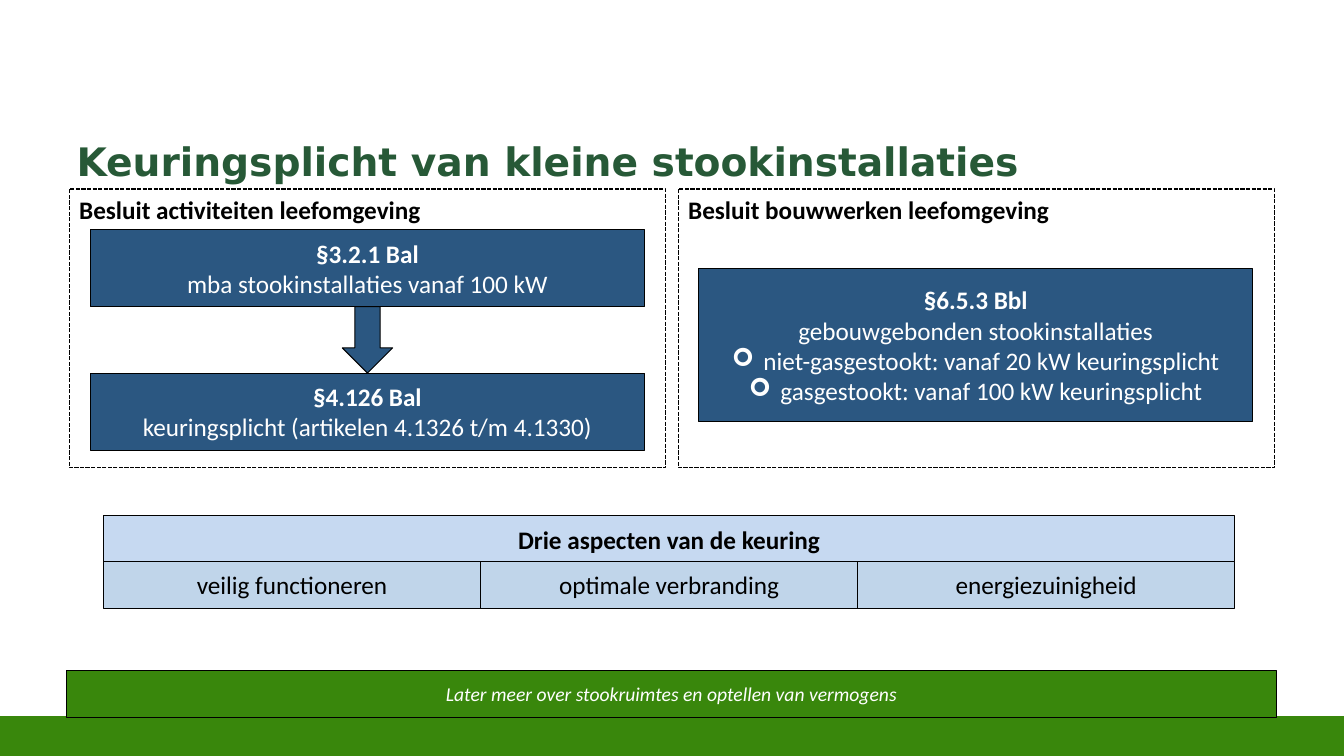
from dataclasses import dataclass

from lxml.etree import SubElement
from pptx import Presentation
from pptx.dml.color import RGBColor as RGB
from pptx.enum.dml import MSO_LINE as Dash
from pptx.enum.shapes import MSO_SHAPE as Form
from pptx.enum.text import MSO_ANCHOR as Anchor, PP_ALIGN as Align
from pptx.oxml.ns import qn
from pptx.util import Pt


@dataclass(frozen=True)
class Theme:
    head: str = "275937"
    green: str = "39870C"
    blue: str = "2B5781"
    pale: str = "C6D9F1"
    cell: str = "C0D5EA"
    black: str = "000000"
    white: str = "FFFFFF"
    font: str = "Calibri"
    title_font: str = "DejaVu Sans"
    title: int = 28
    body: int = 18
    note: int = 14


T = Theme()


def add_run(para, text, color, size=T.body, font=T.font, bold=False, italic=False):
    run = para.add_run()
    run.text = text
    face = run.font
    face.name, face.size = font, Pt(size)
    face.bold, face.italic = bold, italic
    face.color.rgb = RGB.from_string(color)


def add_form(slide, box, fill=None, line=T.black, width=0.75, form=Form.RECTANGLE):
    shape = slide.shapes.add_shape(form, *map(Pt, box))
    shape.shadow.inherit = False
    if fill:
        shape.fill.solid()
        shape.fill.fore_color.rgb = RGB.from_string(fill)
    else:
        shape.fill.background()
    shape.line.color.rgb = RGB.from_string(line)
    shape.line.width = Pt(width)
    return shape


def add_bullet(para):
    props = para._p.get_or_add_pPr()
    props.set("marL", str(Pt(22.5)))
    props.set("indent", str(Pt(-22.5)))
    SubElement(props, qn("a:buFont")).set("typeface", "Wingdings")
    SubElement(props, qn("a:buChar")).set("char", "➢")


def add_label(slide, box, fill, text, color=T.black, **style):
    """Filled box with one centred line."""
    frame = add_form(slide, box, fill).text_frame
    frame.word_wrap = True
    frame.vertical_anchor = Anchor.MIDDLE
    para = frame.paragraphs[0]
    para.alignment = Align.CENTER
    add_run(para, text, color, **style)
    return frame


def add_rule(slide, box, code, text, items=()):
    """Blue box: bold article, its scope, and optional bullets."""
    frame = add_label(slide, box, T.blue, code, T.white, bold=True)
    for i, line in enumerate((text, *items)):
        para = frame.add_paragraph()
        para.alignment = Align.CENTER
        if i:
            add_bullet(para)
        add_run(para, line, T.white)


def add_group(slide, box, text):
    """Dashed frame with a heading at its top left."""
    shape = add_form(slide, box, width=1)
    shape.line.dash_style = Dash.SQUARE_DOT
    frame = shape.text_frame
    frame.word_wrap = True
    frame.vertical_anchor = Anchor.TOP
    para = frame.paragraphs[0]
    para.alignment = Align.LEFT
    add_run(para, text, T.black, bold=True)


def set_title(slide, text):
    title = slide.shapes.title
    title.left, title.top, title.width, title.height = map(Pt, (47.5, 92, 864, 52.5))
    frame = title.text_frame
    frame.vertical_anchor = Anchor.TOP
    frame.margin_top = Pt(6)
    para = frame.paragraphs[0]
    para.alignment = Align.LEFT
    add_run(para, text, T.head, T.title, T.title_font, bold=True)


def add_aspects(slide, head, names):
    left, top, wide, high = 74, 368.5, 808, 33.5
    add_label(slide, (left, top, wide, high), T.pale, head, bold=True)
    step = wide / len(names)
    for i, name in enumerate(names):
        add_label(slide, (left + i * step, 401, step, high), T.cell, name)


def main():
    deck = Presentation()
    deck.slide_width, deck.slide_height = Pt(960), Pt(540)
    slide = deck.slides.add_slide(deck.slide_layouts[5])

    add_form(slide, (0, 512.5, 960, 28), T.green, T.green, 2)
    set_title(slide, "Keuringsplicht van kleine stookinstallaties")

    add_rule(slide, (64.5, 164, 396, 55), "§3.2.1 Bal",
             "mba stookinstallaties vanaf 100 kW")
    add_rule(slide, (64.5, 266.5, 396, 55), "§4.126 Bal",
             "keuringsplicht (artikelen 4.1326 t/m 4.1330)")
    add_rule(slide, (499, 192, 396, 109), "§6.5.3 Bbl",
             "gebouwgebonden stookinstallaties",
             ("niet-gasgestookt: vanaf 20 kW keuringsplicht",
              "gasgestookt: vanaf 100 kW keuringsplicht"))
    add_form(slide, (244.5, 219, 36, 47.5), T.blue, form=Form.DOWN_ARROW)

    add_aspects(slide, "Drie aspecten van de keuring",
                ("veilig functioneren", "optimale verbranding", "energiezuinigheid"))
    add_label(slide, (47.5, 479, 864.5, 33.5), T.green,
              "Later meer over stookruimtes en optellen van vermogens",
              T.white, size=T.note, italic=True)

    for left, name in ((49.5, "activiteiten"), (484.5, "bouwwerken")):
        add_group(slide, (left, 135, 426, 199), f"Besluit {name} leefomgeving")

    deck.save("out.pptx")


if __name__ == "__main__":
    main()
